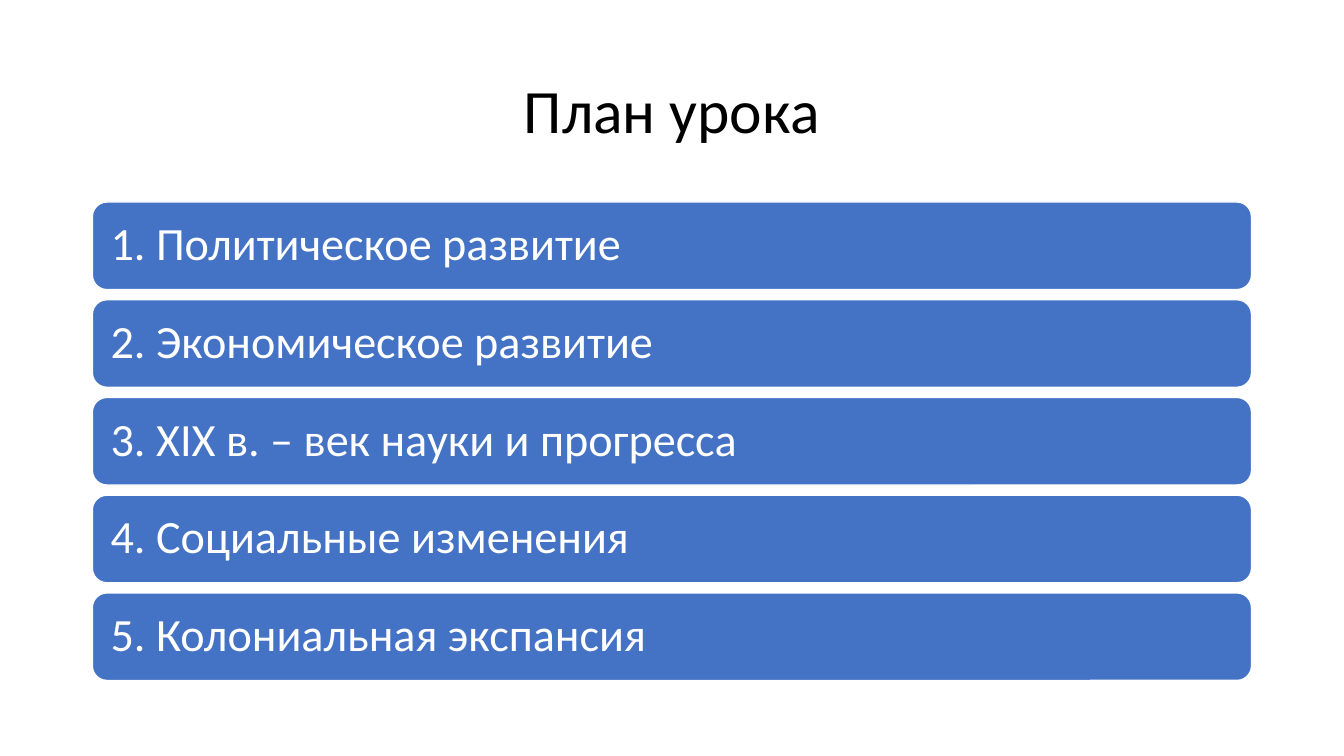
from pptx import Presentation
from pptx.dml.color import RGBColor
from pptx.enum.shapes import MSO_SHAPE
from pptx.enum.text import MSO_ANCHOR, PP_ALIGN
from pptx.util import Pt

BLACK = RGBColor(0x00, 0x00, 0x00)
WHITE = RGBColor(0xFF, 0xFF, 0xFF)
BLUE = RGBColor(0x44, 0x72, 0xC4)

FONT = "Calibri"
LEFT, WIDTH = 66, 828
BAR_TOP, BAR_HEIGHT, BAR_PITCH = 144.3, 62.6, 69.8

TOPICS = [
    "Политическое развитие",
    "Экономическое развитие",
    "XIX в. – век науки и прогресса",
    "Социальные изменения",
    "Колониальная экспансия",
]


def write_text(sp, text, size, color, align=PP_ALIGN.LEFT, inset=7.2):
    tf = sp.text_frame
    tf.word_wrap = True
    tf.vertical_anchor = MSO_ANCHOR.MIDDLE
    tf.margin_left = tf.margin_right = Pt(inset)
    tf.margin_top = tf.margin_bottom = Pt(3.6)
    p = tf.paragraphs[0]
    p.alignment = align
    p.line_spacing = 0.9
    r = p.add_run()
    r.text = text
    r.font.name = FONT
    r.font.size = Pt(size)
    r.font.color.rgb = color


def add_title(slide, text):
    sp = slide.shapes.add_textbox(Pt(LEFT), Pt(28.75), Pt(WIDTH), Pt(104.4))
    write_text(sp, text, size=44, color=BLACK, align=PP_ALIGN.CENTER)


def add_topic_bar(slide, top, text):
    sp = slide.shapes.add_shape(MSO_SHAPE.ROUNDED_RECTANGLE,
                                Pt(LEFT), Pt(top), Pt(WIDTH), Pt(BAR_HEIGHT))
    sp.shadow.inherit = False
    sp.fill.solid()
    sp.fill.fore_color.rgb = BLUE
    sp.line.color.rgb = WHITE
    sp.line.width = Pt(1)
    write_text(sp, text, size=33, color=WHITE, inset=10)


def main():
    prs = Presentation()
    prs.slide_width, prs.slide_height = Pt(960), Pt(540)
    slide = prs.slides.add_slide(prs.slide_layouts[6])

    # Heading
    add_title(slide, "План урока")

    # Numbered lesson topics
    for i, topic in enumerate(TOPICS):
        add_topic_bar(slide, BAR_TOP + i * BAR_PITCH, f"{i + 1}. {topic}")

    prs.save("out.pptx")


if __name__ == "__main__":
    main()
